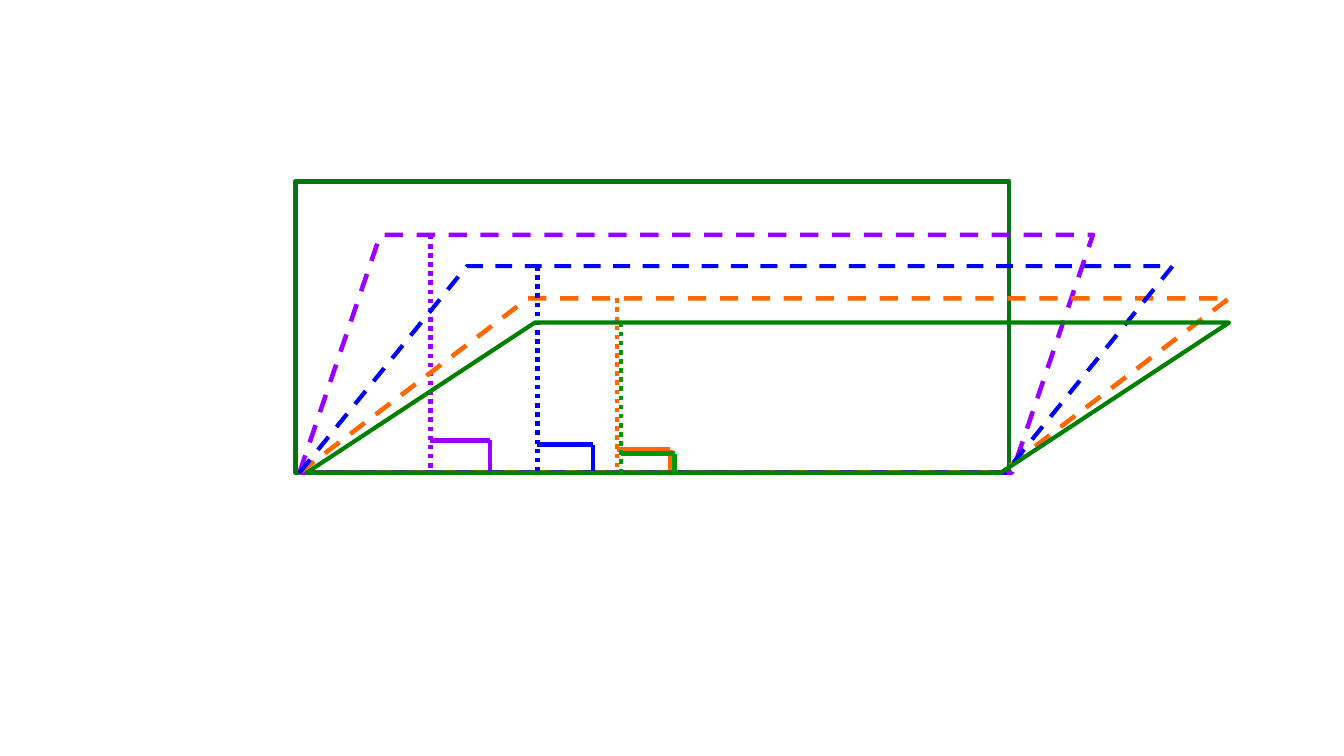
from lxml.etree import SubElement
from pptx import Presentation
from pptx.dml.color import RGBColor
from pptx.enum.dml import MSO_LINE as Dash
from pptx.enum.shapes import MSO_CONNECTOR as Connector, MSO_SHAPE as Shape
from pptx.oxml.ns import qn
from pptx.util import Inches, Pt

FOREST = RGBColor(0x07, 0x73, 0x14)
PURPLE = RGBColor(0x99, 0x00, 0xFF)
ORANGE = RGBColor(0xFF, 0x66, 0x00)
BLUE = RGBColor(0x00, 0x00, 0xFF)
GREEN = RGBColor(0x00, 0x80, 0x00)
LIGHT_GREEN = RGBColor(0x00, 0x99, 0x00)

COLUMNS, ROWS = 13.33, 7.5
CELL = Inches(1)
BASE = 4.69


class Diagram:
    """Draws outlined figures on one page, measured in grid columns and rows."""

    def __init__(self, deck, weight=3.25):
        self.page = deck.slides.add_slide(deck.slide_layouts[6])
        self.weight = weight

    def stroke(self, line, color, weight=None, dash=None):
        """Set the colour, weight and dash of a line."""
        line.color.rgb = color
        line.width = Pt(weight or self.weight)
        if dash:
            line.dash_style = dash

    def outline(self, shapes, kind, left, top, width, color, slant=None, **style):
        """Add an unfilled shape that stands on the base line."""
        height = BASE - top
        box = shapes.add_shape(kind, *(round(n * CELL) for n in (left, top, width, height)))
        box.shadow.inherit = False
        box.fill.background()
        if slant is not None:
            box.adjustments[0] = slant
        self.stroke(box.line, color, **style)

    def segment(self, shapes, start, end, color, **style):
        """Add a straight line between two grid points."""
        points = [round(n * CELL) for n in (*start, *end)]
        line = shapes.add_connector(Connector.STRAIGHT, *points)
        self.stroke(line.line, color, **style)
        SubElement(line._element.spPr, qn("a:effectLst"))

    def parallelogram(self, left, top, width, slant, color, foot, mark, mark_color=None,
                      weight=None, mark_weight=None, dash=None):
        """Group a parallelogram with its dotted height and right-angle mark."""
        shapes = self.page.shapes.add_group_shape().shapes
        self.outline(shapes, Shape.PARALLELOGRAM, left, top, width, color, slant,
                     weight=weight, dash=dash)
        color = mark_color or color
        side, rise = foot + mark[0], BASE - mark[1]
        self.segment(shapes, (foot, top), (foot, BASE), color, dash=Dash.ROUND_DOT)
        self.segment(shapes, (foot, rise), (side, rise), color, weight=mark_weight)
        self.segment(shapes, (side, rise), (side, BASE), color, weight=mark_weight)


def main():
    """Build the deck with a rectangle leaning into ever flatter parallelograms."""
    deck = Presentation()
    deck.slide_width, deck.slide_height = Inches(COLUMNS), Inches(ROWS)
    diagram = Diagram(deck)
    diagram.outline(diagram.page.shapes, Shape.RECTANGLE, 2.93, 1.8, 7.08, FOREST)
    diagram.parallelogram(2.97, 2.33, 7.87, 0.34, PURPLE, 4.27, (0.59, 0.32), dash=Dash.DASH)
    diagram.parallelogram(2.97, 2.96, 9.22, 1.31, ORANGE, 6.12, (0.53, 0.23),
                          mark_weight=3, dash=Dash.DASH)
    diagram.parallelogram(2.97, 2.64, 8.66, 0.81, BLUE, 5.33, (0.55, 0.28),
                          weight=3, dash=Dash.DASH)
    diagram.parallelogram(3.04, 3.2, 9.15, 1.52, GREEN, 6.16, (0.53, 0.19), LIGHT_GREEN,
                          weight=3)
    deck.save("out.pptx")


if __name__ == "__main__":
    main()
